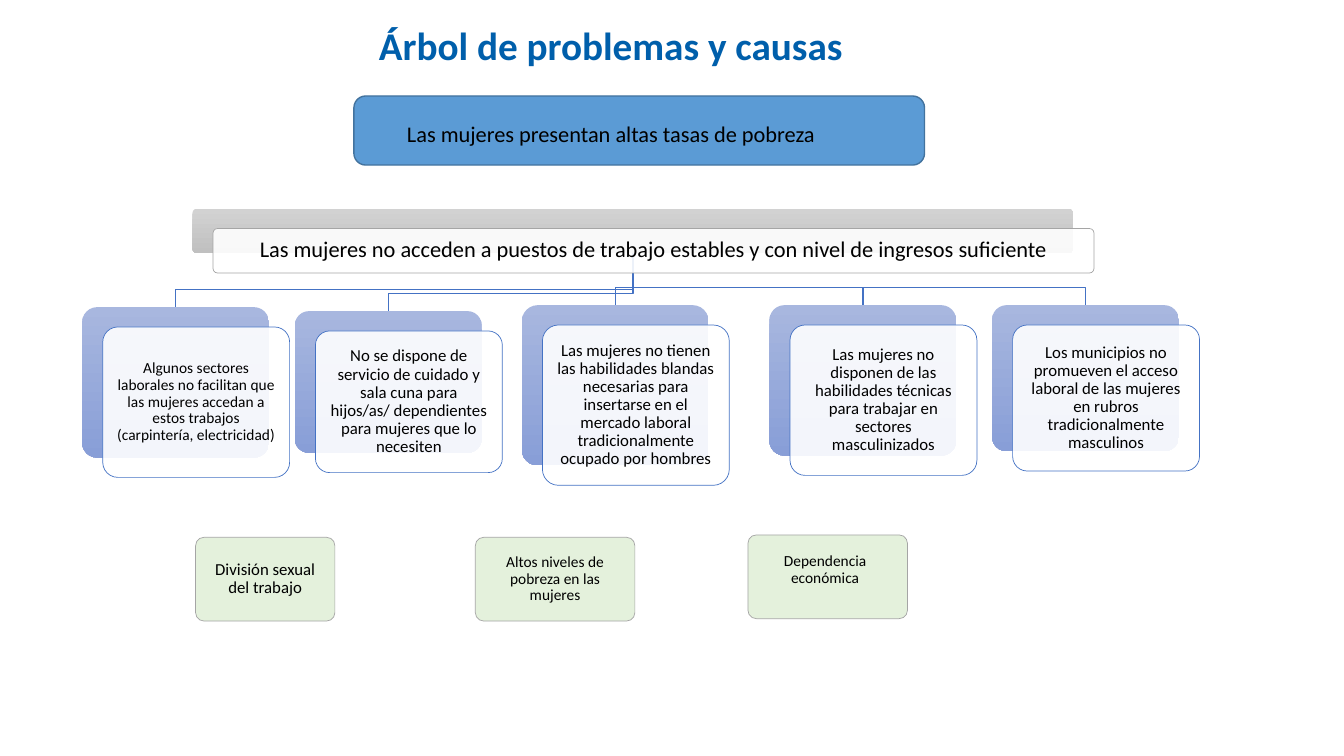
from lxml import etree
from pptx import Presentation
from pptx.dml.color import RGBColor
from pptx.enum import shapes, text
from pptx.oxml.ns import qn
from pptx.util import Cm, Pt

FONT = "Calibri"
BLACK = RGBColor(0x00, 0x00, 0x00)
WHITE = RGBColor(0xFF, 0xFF, 0xFF)
TITLE_BLUE = RGBColor(0x00, 0x5F, 0xAB)
PROBLEM_BLUE = RGBColor(0x5B, 0x9B, 0xD5)
PROBLEM_EDGE = RGBColor(0x43, 0x73, 0x9E)
LINK_BLUE = RGBColor(0x44, 0x72, 0xC4)
GREY = RGBColor(0xA5, 0xA5, 0xA5)
GREEN = RGBColor(0xE2, 0xF0, 0xD9)
GREY_SHADES = (RGBColor(0xD2, 0xD2, 0xD2), RGBColor(0xC0, 0xC0, 0xC0))
BLUE_SHADES = (RGBColor(0xA8, 0xB7, 0xDF), RGBColor(0x88, 0x9E, 0xD7))

# Lengths in centimetres
CARD_SHIFT = (0.52, 0.5)
CENTRAL = (4.85, 5.26, 22.2, 1.12)
CAUSE_WIDTH = 4.71
LINK_DROP = 0.44

# Left, top, height, text size, wording
CAUSES = [
    (2.07, 7.74, 3.79, 11, "Algunos sectores laborales no facilitan que las mujeres "
     "accedan a estos trabajos (carpintería, electricidad)"),
    (7.43, 7.84, 3.57, 12, "No se dispone de servicio de cuidado y sala cuna para "
     "hijos/as/ dependientes para mujeres que lo necesiten"),
    (13.15, 7.69, 4.04, 12, "Las mujeres no tienen las habilidades blandas necesarias para "
     "insertarse en el mercado laboral tradicionalmente ocupado por hombres"),
    (19.39, 7.69, 3.79, 12, "Las mujeres no disponen de las habilidades técnicas para "
     "trabajar en sectores masculinizados"),
    (25.0, 7.69, 3.68, 12, "Los municipios no promueven el acceso laboral de las mujeres "
     "en rubros tradicionalmente masculinos"),
]

# Left, top, width, text size, margins, wording
ROOTS = [
    (4.93, 13.54, 3.51, 12, (0.18,) * 4, "División sexual del trabajo"),
    (11.98, 13.54, 4.02, 11, (0.18,) * 4, "Altos niveles de pobreza en las mujeres"),
    (18.85, 13.48, 4.02, 11, (0.13, 0.13, 0.26, 0.46), "Dependencia económica"),
]
ROOT_HEIGHT = 2.11


def add_rounded(page, left, top, width, height, fill, edge=None, weight=0.5,
                opacity=100, radius=0.1):
    """Rounded box; a pair of colours as fill gives a vertical gradient."""
    box = page.shapes.add_shape(shapes.MSO_SHAPE.ROUNDED_RECTANGLE,
                                Cm(left), Cm(top), Cm(width), Cm(height))
    box.adjustments[0] = radius
    box.shadow.inherit = False
    if isinstance(fill, RGBColor):
        box.fill.solid()
        box.fill.fore_color.rgb = fill
        if opacity < 100:
            colour = box._element.spPr.find(qn("a:solidFill"))[0]
            etree.SubElement(colour, qn("a:alpha")).set("val", str(opacity * 1000))
    else:
        box.fill.gradient()
        box.fill.gradient_angle = 270
        for stop, shade in zip(box.fill.gradient_stops, fill):
            stop.color.rgb = shade
    if edge is None:
        box.line.fill.background()
    else:
        box.line.color.rgb = edge
        box.line.width = Pt(weight)
    return box


def write(box, wording, size, margins):
    """Centred black text; margins are left, top, right, bottom."""
    frame = box.text_frame
    frame.word_wrap = True
    frame.vertical_anchor = text.MSO_ANCHOR.MIDDLE
    (frame.margin_left, frame.margin_top,
     frame.margin_right, frame.margin_bottom) = [Cm(margin) for margin in margins]
    frame.text = wording
    para = frame.paragraphs[0]
    para.alignment = text.PP_ALIGN.CENTER
    para.line_spacing = 0.9
    span = para.runs[0]
    span.font.name = FONT
    span.font.size = Pt(size)
    span.font.color.rgb = BLACK


def add_card(page, left, top, width, height, shades, edge, wording, size):
    """Shaded backing with a translucent white card shifted over it."""
    add_rounded(page, left, top, width, height, shades)
    front = add_rounded(page, left + CARD_SHIFT[0], top + CARD_SHIFT[1],
                        width, height, WHITE, edge, opacity=90)
    write(front, wording, size, (0.23,) * 4)


def add_link(page, cause_left, cause_top):
    """Elbow line from the central problem down to one cause."""
    left, top, width, height = CENTRAL
    start_x, start_y = left + width / 2, top + height
    end_x, bend_y = cause_left + CAUSE_WIDTH / 2, cause_top - LINK_DROP
    points = [(start_x, bend_y), (end_x, bend_y), (end_x, cause_top)]
    builder = page.shapes.build_freeform(Cm(start_x), Cm(start_y))
    builder.add_line_segments([(Cm(x), Cm(y)) for x, y in points], close=False)
    link = builder.convert_to_shape()
    link.shadow.inherit = False
    link.fill.background()
    link.line.color.rgb = LINK_BLUE
    link.line.width = Pt(1)


def add_title(page, wording):
    box = page.shapes.add_textbox(Cm(9.3), Cm(0.41), Cm(14), Cm(1.45))
    box.text_frame.word_wrap = True
    box.text_frame.text = wording
    span = box.text_frame.paragraphs[0].runs[0]
    span.font.name = FONT
    span.font.size = Pt(28)
    span.font.bold = True
    span.font.color.rgb = TITLE_BLUE


def main():
    deck = Presentation()
    deck.slide_width, deck.slide_height = Cm(33.87), Cm(19.05)
    page = deck.slides.add_slide(deck.slide_layouts[6])

    # Title and main problem
    add_title(page, "Árbol de problemas y causas")
    problem = add_rounded(page, 8.92, 2.42, 14.38, 1.74, PROBLEM_BLUE,
                          PROBLEM_EDGE, weight=1, radius=0.17)
    write(problem, "Las mujeres presentan altas tasas de pobreza", 16,
          (0.13, 0.38, 1.55, 0.13))

    # Central problem and its causes
    for left, top, *_ in reversed(CAUSES):
        add_link(page, left, top)
    add_card(page, *CENTRAL, GREY_SHADES, GREY,
             "Las mujeres no acceden a puestos de trabajo estables y con nivel "
             "de ingresos suficiente", 16)
    for left, top, height, size, wording in CAUSES:
        add_card(page, left, top, CAUSE_WIDTH, height, BLUE_SHADES, LINK_BLUE,
                 wording, size)

    # Root causes
    for left, top, width, size, margins, wording in ROOTS:
        root = add_rounded(page, left, top, width, ROOT_HEIGHT, GREEN, GREY, opacity=90)
        write(root, wording, size, margins)

    deck.save("out.pptx")


if __name__ == "__main__":
    main()
